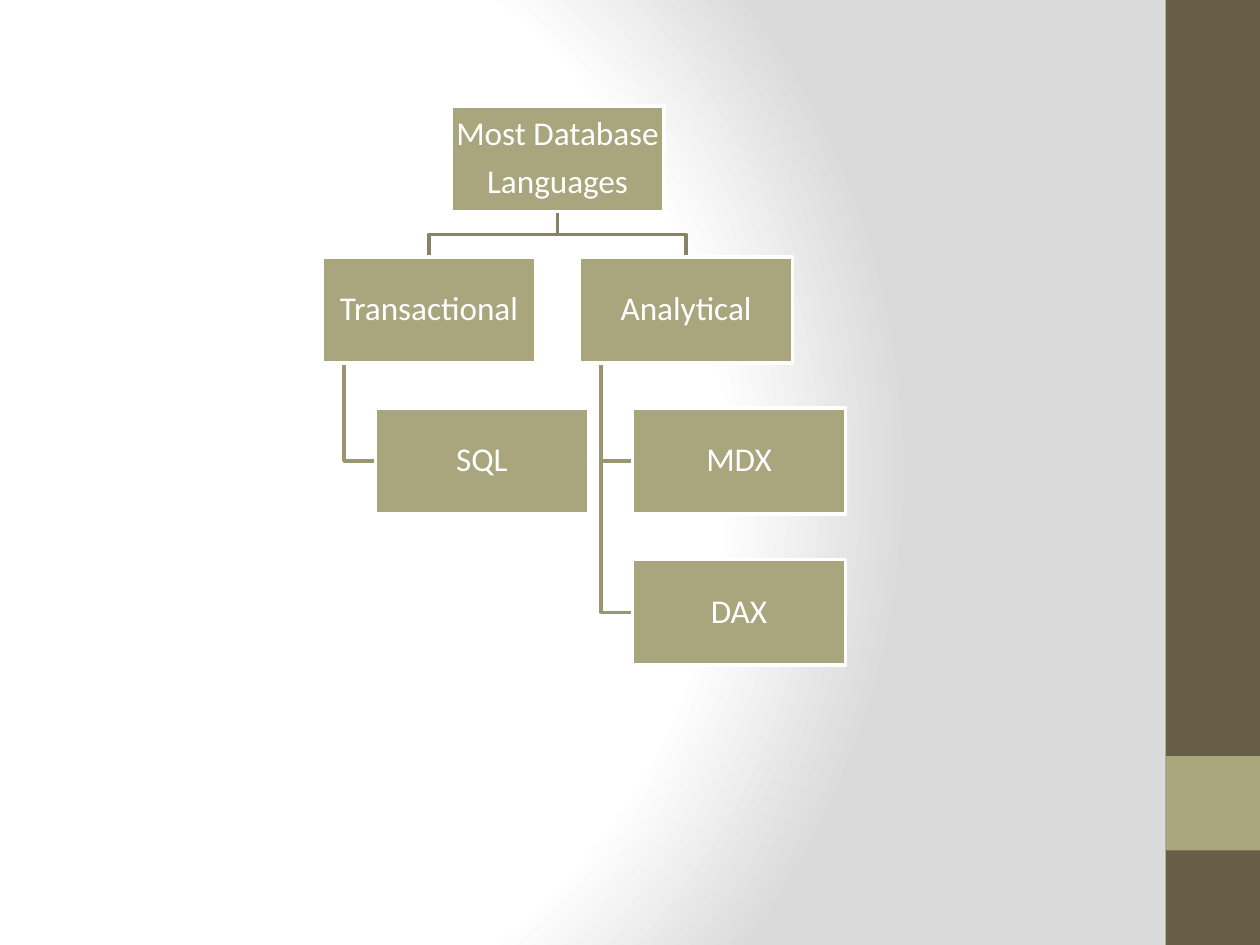
from pptx import Presentation
from pptx.dml.color import RGBColor
from pptx.enum.shapes import MSO_SHAPE
from pptx.enum.text import MSO_ANCHOR, PP_ALIGN
from pptx.oxml import parse_xml
from pptx.oxml.ns import nsdecls, qn
from pptx.util import Inches, Pt


def color(code):
    return RGBColor.from_string(code)


def block(x, y, w, h, fill, line=None):
    box = slide.shapes.add_shape(MSO_SHAPE.RECTANGLE, Inches(x), Inches(y), Inches(w), Inches(h))
    box.shadow.inherit = False
    box.fill.solid()
    box.fill.fore_color.rgb = color(fill)
    if line:
        box.line.color.rgb = color(line)
        box.line.width = Pt(2)
    else:
        box.line.fill.background()
    return box


deck = Presentation()
deck.slide_width, deck.slide_height = Inches(10), Inches(7.5)
slide = deck.slides.add_slide(deck.slide_layouts[6])

slide.background.fill.gradient()
old = slide.element.find(".//" + qn("a:gradFill"))
stops = [(0, "FFFFFF"), (75, "FFFFFF"), (100, "DADADA")]
marks = "".join(f'<a:gs pos="{pos * 1000}"><a:srgbClr val="{code}"/></a:gs>' for pos, code in stops)
old.getparent().replace(old, parse_xml(
    f'<a:gradFill {nsdecls("a")} rotWithShape="1"><a:gsLst>{marks}</a:gsLst>'
    '<a:path path="circle"><a:fillToRect l="20000" t="50000" r="100000" b="50000"/></a:path>'
    '</a:gradFill>'))

block(9.25, 0, 0.75, 7.5, "675E47")
block(9.25, 6, 0.75, 0.75, "A9A57C")

wide, high = 1.69, 0.84
top, step = 0.84, 1.2
root, left, right = 3.58, 2.56, 4.6
shift, inset = 0.42, 0.17
rows = [top + step * n for n in range(4)]

links = []
for col, last in [(right, 3), (right, 2), (left, 2)]:
    stem, mid = col + inset, rows[last] + high / 2
    links.append(("999671", [(stem, rows[1] + high), (stem, mid), (col + shift, mid)]))
for col in (right, left):
    start, end = root + wide / 2, col + wide / 2
    bend = (rows[0] + high + rows[1]) / 2
    links.append(("878463", [(start, rows[0] + high), (start, bend), (end, bend), (end, rows[1])]))

for code, points in links:
    spots = [(Inches(x), Inches(y)) for x, y in points]
    pen = slide.shapes.build_freeform(*spots[0])
    pen.add_line_segments(spots[1:], close=False)
    link = pen.convert_to_shape()
    link.shadow.inherit = False
    link.fill.background()
    link.line.color.rgb = color(code)
    link.line.width = Pt(2)

nodes = [
    (root, 0, ["Most Database", "Languages"]),
    (left, 1, ["Transactional"]),
    (left + shift, 2, ["SQL"]),
    (right, 1, ["Analytical"]),
    (right + shift, 2, ["MDX"]),
    (right + shift, 3, ["DAX"]),
]
for x, row, lines in nodes:
    frame = block(x, rows[row], wide, high, "A9A57C", "FFFFFF").text_frame
    frame.word_wrap = True
    frame.vertical_anchor = MSO_ANCHOR.MIDDLE
    frame.margin_left = frame.margin_right = frame.margin_top = frame.margin_bottom = Inches(0.01)
    for n, text in enumerate(lines):
        para = frame.add_paragraph() if n else frame.paragraphs[0]
        para.alignment = PP_ALIGN.CENTER
        para.line_spacing = 0.9
        para.space_after = Pt(6.65)
        run = para.add_run()
        run.text = text
        run.font.size = Pt(19)
        run.font.name = "Calibri"
        run.font.color.rgb = color("FFFFFF")

deck.save("out.pptx")
